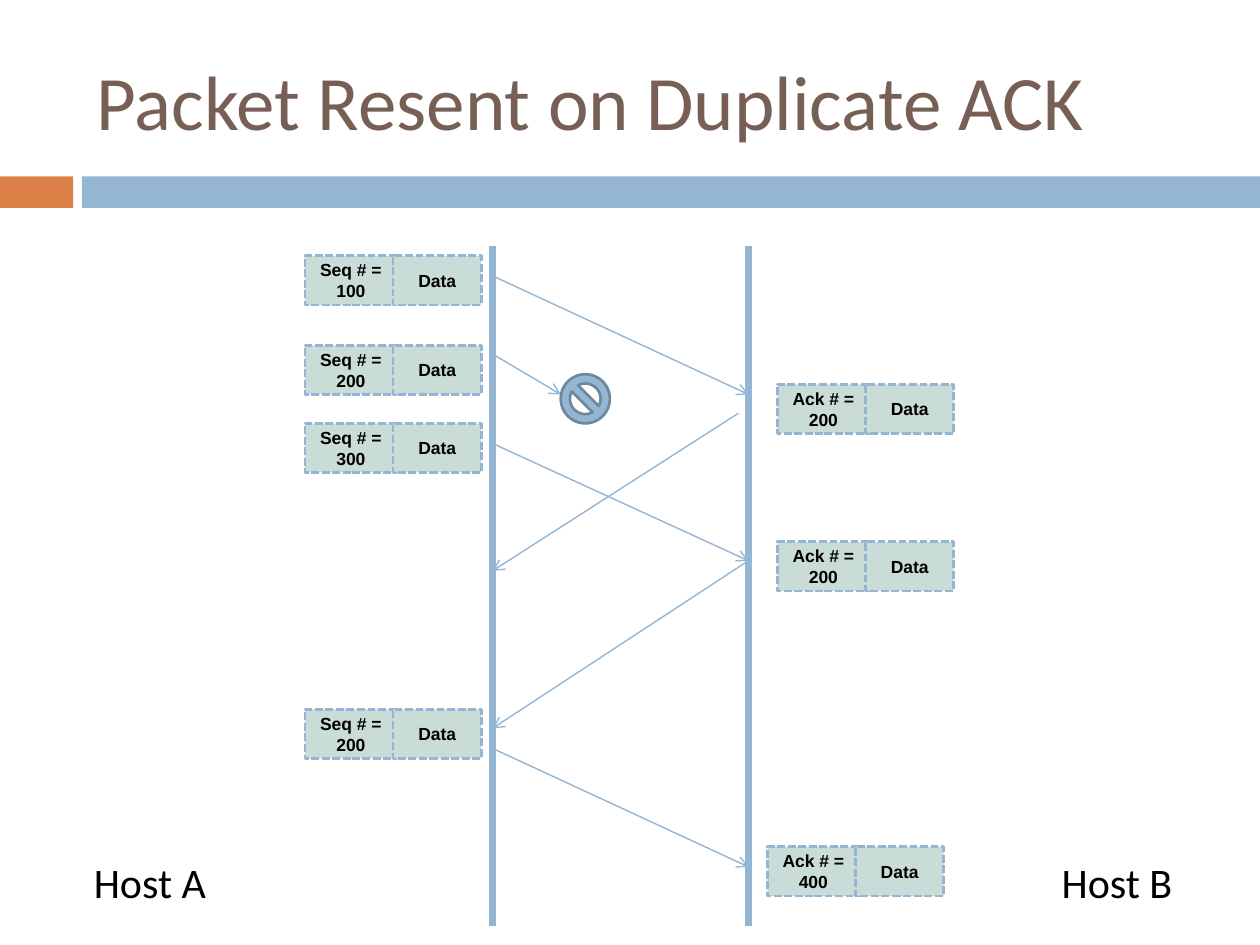
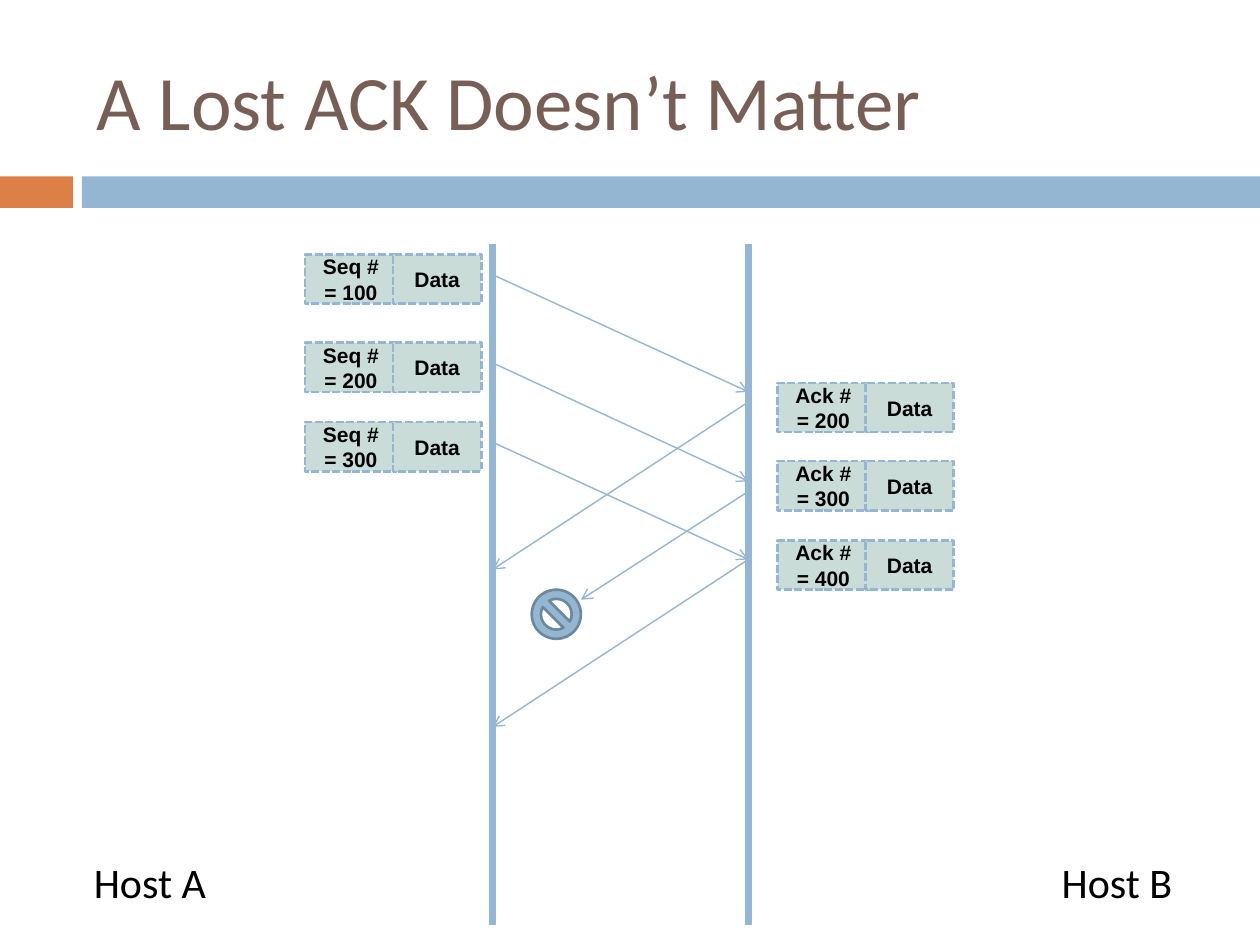
from pptx import Presentation
from pptx import util as u
from pptx.dml.color import RGBColor
from pptx.enum import dml, shapes, text
from pptx.oxml.ns import qn
from lxml import etree

BLUE, ORANGE, BROWN = "94B6D2", "DD8047", "775F55"
PALE, SLATE, BLACK = "CADCD8", "6D879B", "000000"

HOST_A, HOST_B = 3.91, 5.94    # x of the two lifelines
SEQ_LEFT, ACK_LEFT = 2.42, 6.17
LIFELINE_HEIGHT = 5.4
PACKET_HEIGHT = 0.39


def color(value):
    return RGBColor.from_string(value)


class SequenceDeck:
    """Holds the shared style and the slide being drawn."""

    def __init__(self):
        self.deck = Presentation()
        self.deck.slide_width, self.deck.slide_height = u.Inches(10), u.Inches(7.5)
        self.page = None
        self.packet_size = 10

    def new_page(self, title, packet_size):
        self.page = self.deck.slides.add_slide(self.deck.slide_layouts[6])
        self.packet_size = packet_size
        self.shape("RECTANGLE", (0, 1.4, 0.58, 0.25), ORANGE)
        self.shape("RECTANGLE", (0.65, 1.4, 9.35, 0.25), BLUE)
        self.label(title, (0.67, 0.25, 8.92, 1.08), 44, BROWN, "LEFT", "MIDDLE")
        for host, left, width in (("Host A", 0.33, 1.72), ("Host B", 7.73, 2.27)):
            self.label(host, (left, 6.75, width, 0.51), 24)

    def add_words(self, box, words, size, font, ink, align, anchor, bold=False):
        frame = box.text_frame
        frame.word_wrap = True
        frame.vertical_anchor = text.MSO_ANCHOR[anchor]
        para = frame.paragraphs[0]
        para.alignment = text.PP_ALIGN[align]
        span = para.add_run()
        span.text = words
        span.font.size, span.font.name, span.font.bold = u.Pt(size), font, bold
        span.font.color.rgb = color(ink)

    def label(self, words, at, size, ink=BLACK, align="CENTER", anchor="TOP"):
        box = self.page.shapes.add_textbox(*map(u.Inches, at))
        self.add_words(box, words, size, "Calibri", ink, align, anchor)

    def shape(self, kind, at, fill, line=None, parent=None):
        owner = parent or self.page
        box = owner.shapes.add_shape(shapes.MSO_SHAPE[kind], *map(u.Inches, at))
        box.shadow.inherit = False
        box.fill.solid()
        box.fill.fore_color.rgb = color(fill)
        if line:
            box.line.color.rgb = color(line)
            box.line.width = u.Pt(1.5)
        else:
            box.line.fill.background()
        return box

    def packet(self, left, top, header):
        group = self.page.shapes.add_group_shape()
        for offset, width, words in ((0, 0.73, header), (0.7, 0.7, "Data")):
            at = (left + offset, top, width, PACKET_HEIGHT)
            cell = self.shape("RECTANGLE", at, PALE, BLUE, group)
            cell.line.dash_style = dml.MSO_LINE.SQUARE_DOT
            self.add_words(cell, words, self.packet_size, "Arial", BLACK,
                           "CENTER", "MIDDLE", bold=True)

    def line(self, start, end, width):
        link = self.page.shapes.add_connector(
            shapes.MSO_CONNECTOR.STRAIGHT, *map(u.Inches, start + end))
        link.line.color.rgb = color(BLUE)
        link.line.width = u.Pt(width)
        etree.SubElement(link._element.spPr, qn("a:effectLst"))
        return link

    def arrow(self, start, end):
        link = self.line(start, end, 0.79)
        outline = link._element.spPr.find(qn("a:ln"))
        etree.SubElement(outline, qn("a:tailEnd"), type="arrow")

    def lifelines(self, top):
        for x in (HOST_A, HOST_B):
            self.line((x, top), (x, top + LIFELINE_HEIGHT), 4)

    def lost(self, left, top):
        self.shape("NO_SYMBOL", (left, top, 0.39, 0.39), BLUE, SLATE)

    def exchange(self, lifeline_top, seqs, acks, arrows, lost_at):
        self.lifelines(lifeline_top)
        for top, number in seqs:
            self.packet(SEQ_LEFT, top, f"Seq # = {number}")
        for left, top, number in acks:
            self.packet(left, top, f"Ack # = {number}")
        for start, end in arrows:
            self.arrow(start, end)
        self.lost(*lost_at)


def main():
    slides = SequenceDeck()

    # A lost packet is sent again after a duplicate ACK
    slides.new_page("Packet Resent on Duplicate ACK", packet_size=10)
    slides.exchange(
        lifeline_top=1.95,
        seqs=[(2.03, 100), (2.74, 200), (3.36, 300), (5.63, 200)],
        acks=[(ACK_LEFT, 3.05, 200), (ACK_LEFT, 4.3, 200), (6.09, 6.72, 400)],
        arrows=[
            ((HOST_A, 2.19), (HOST_B, 3.13)),
            ((HOST_A, 2.81), (4.45, 3.13)),
            ((HOST_A, 3.52), (HOST_B, 4.45)),
            ((5.86, 3.28), (HOST_A, 4.53)),
            ((HOST_B, 4.45), (HOST_A, 5.78)),
            ((HOST_A, 5.94), (HOST_B, 6.88)),
        ],
        lost_at=(4.45, 2.97),
    )

    # A later ACK covers for the lost one
    slides.new_page("A Lost ACK Doesn’t Matter", packet_size=12)
    slides.exchange(
        lifeline_top=1.94,
        seqs=[(2.02, 100), (2.72, 200), (3.35, 300)],
        acks=[(ACK_LEFT, 3.04, 200), (ACK_LEFT, 3.66, 300), (ACK_LEFT, 4.29, 400)],
        arrows=[
            ((HOST_A, 2.18), (HOST_B, 3.11)),
            ((HOST_A, 2.88), (HOST_B, 3.82)),
            ((HOST_A, 3.51), (HOST_B, 4.44)),
            ((HOST_B, 3.19), (HOST_A, 4.52)),
            ((HOST_B, 3.9), (4.61, 4.76)),
            ((HOST_B, 4.44), (HOST_A, 5.77)),
        ],
        lost_at=(4.22, 4.68),
    )

    slides.deck.save("out.pptx")


if __name__ == "__main__":
    main()
